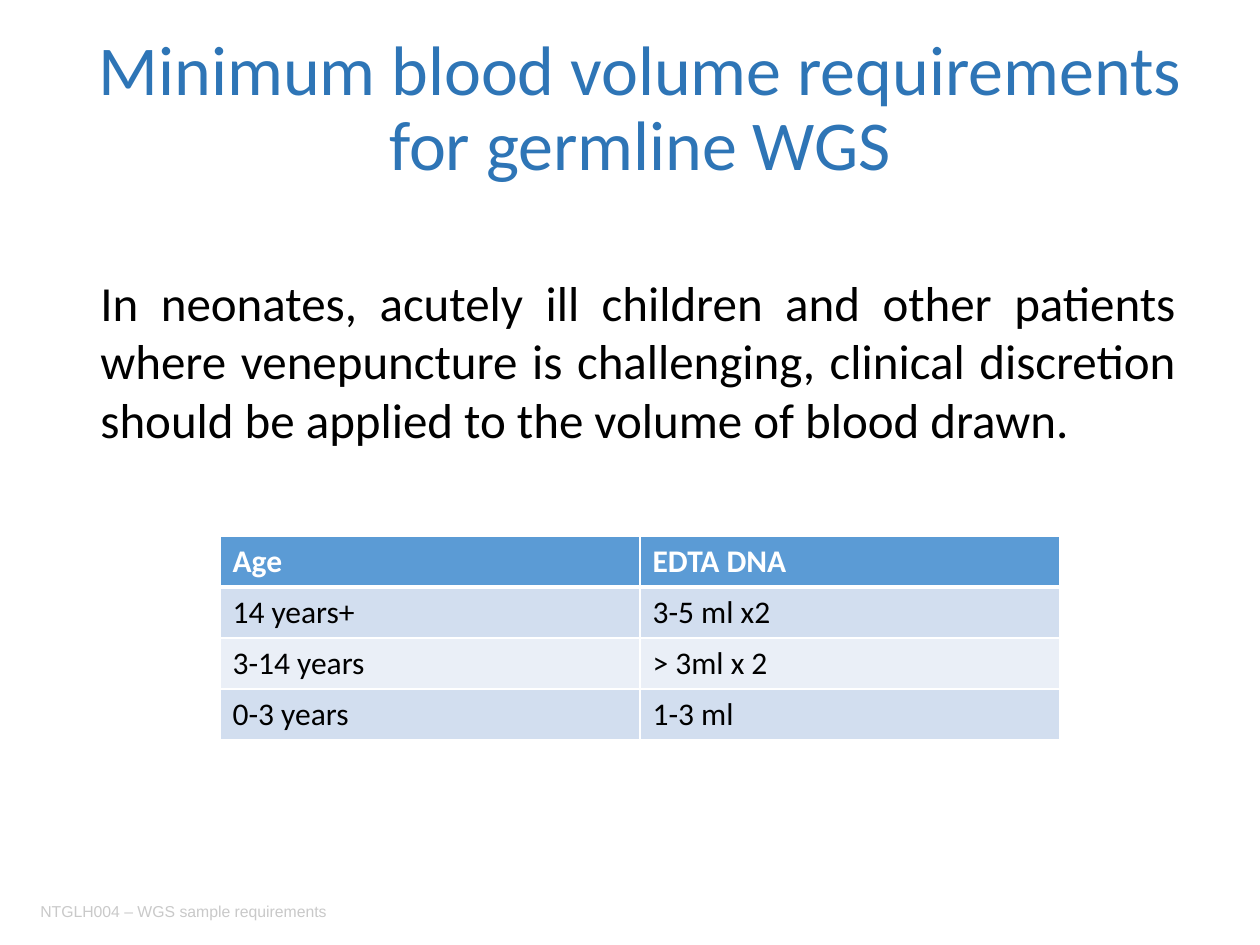
from lxml.etree import SubElement
from pptx import Presentation
from pptx.dml.color import RGBColor
from pptx.enum.text import MSO_ANCHOR as Anchor, PP_ALIGN as Align
from pptx.oxml.ns import qn
from pptx.util import Pt

SCALE = 914400 / 126
BLUE = RGBColor(0x2E, 0x75, 0xB6)
HEAD = RGBColor(0x5B, 0x9B, 0xD5)
BANDS = RGBColor(0xD2, 0xDE, 0xEF), RGBColor(0xEA, 0xEF, 0xF7)
GREY = RGBColor(0xC9, 0xC9, 0xC9)
BLACK = RGBColor(0, 0, 0)
WHITE = RGBColor(255, 255, 255)
ROWS = [
    ("Age", "EDTA DNA"),
    ("14 years+", "3-5 ml x2"),
    ("3-14 years", "> 3ml x 2"),
    ("0-3 years", "1-3 ml"),
]


def px(n):
    return round(n * SCALE)


def write(para, words, size, color, font="Calibri", bold=False):
    run = para.add_run()
    run.text = words
    run.font.name = font
    run.font.size = Pt(size)
    run.font.bold = bold
    run.font.color.rgb = color


def add_text(slide, box, anchor, align):
    frame = slide.shapes.add_textbox(*map(px, box)).text_frame
    frame.word_wrap = True
    frame.vertical_anchor = anchor
    para = frame.paragraphs[0]
    para.alignment = align
    return para


def add_title(slide, box):
    para = add_text(slide, box, Anchor.MIDDLE, Align.CENTER)
    para.line_spacing = 0.9
    write(para, "Minimum blood volume requirements for germline WGS", 40, BLUE)


def add_body(slide, box):
    para = add_text(slide, box, Anchor.TOP, Align.JUSTIFY)
    write(para, "In neonates, acutely ill children and other patients where "
          "venepuncture is challenging, clinical discretion should be applied "
          "to the volume of blood drawn.", 28, BLACK)


def add_footer(slide, box):
    para = add_text(slide, box, Anchor.MIDDLE, Align.LEFT)
    write(para, "NTGLH004 – WGS sample requirements", 9, GREY, "Arial")


def add_edges(cell, top, bottom):
    props = cell._tc.get_or_add_tcPr()
    for tag, width in (("lnL", 1), ("lnR", 1), ("lnT", top), ("lnB", bottom)):
        line = SubElement(props, qn("a:" + tag), w=str(Pt(width)))
        fill = SubElement(line, qn("a:solidFill"))
        SubElement(fill, qn("a:srgbClr"), val=str(WHITE))


def add_grid(slide, box):
    shape = slide.shapes.add_table(len(ROWS), len(ROWS[0]), *map(px, box))
    table = shape.table
    for r, row in enumerate(ROWS):
        head = r == 0
        for c, words in enumerate(row):
            cell = table.cell(r, c)
            add_edges(cell, 3 if r == 1 else 1, 3 if head else 1)
            cell.fill.solid()
            cell.fill.fore_color.rgb = HEAD if head else BANDS[(r - 1) % 2]
            write(cell.text_frame.paragraphs[0], words, 18,
                  WHITE if head else BLACK, bold=head)


def main():
    deck = Presentation()
    deck.slide_width, deck.slide_height = px(1260), px(945)
    slide = deck.slides.add_slide(deck.slide_layouts[6])
    add_title(slide, (59, 19, 1162, 183))
    add_grid(slide, (220, 536, 840, 204))
    add_footer(slide, (28, 892, 591, 38))
    add_body(slide, (88, 266, 1100, 190))
    deck.save("out.pptx")


if __name__ == "__main__":
    main()
